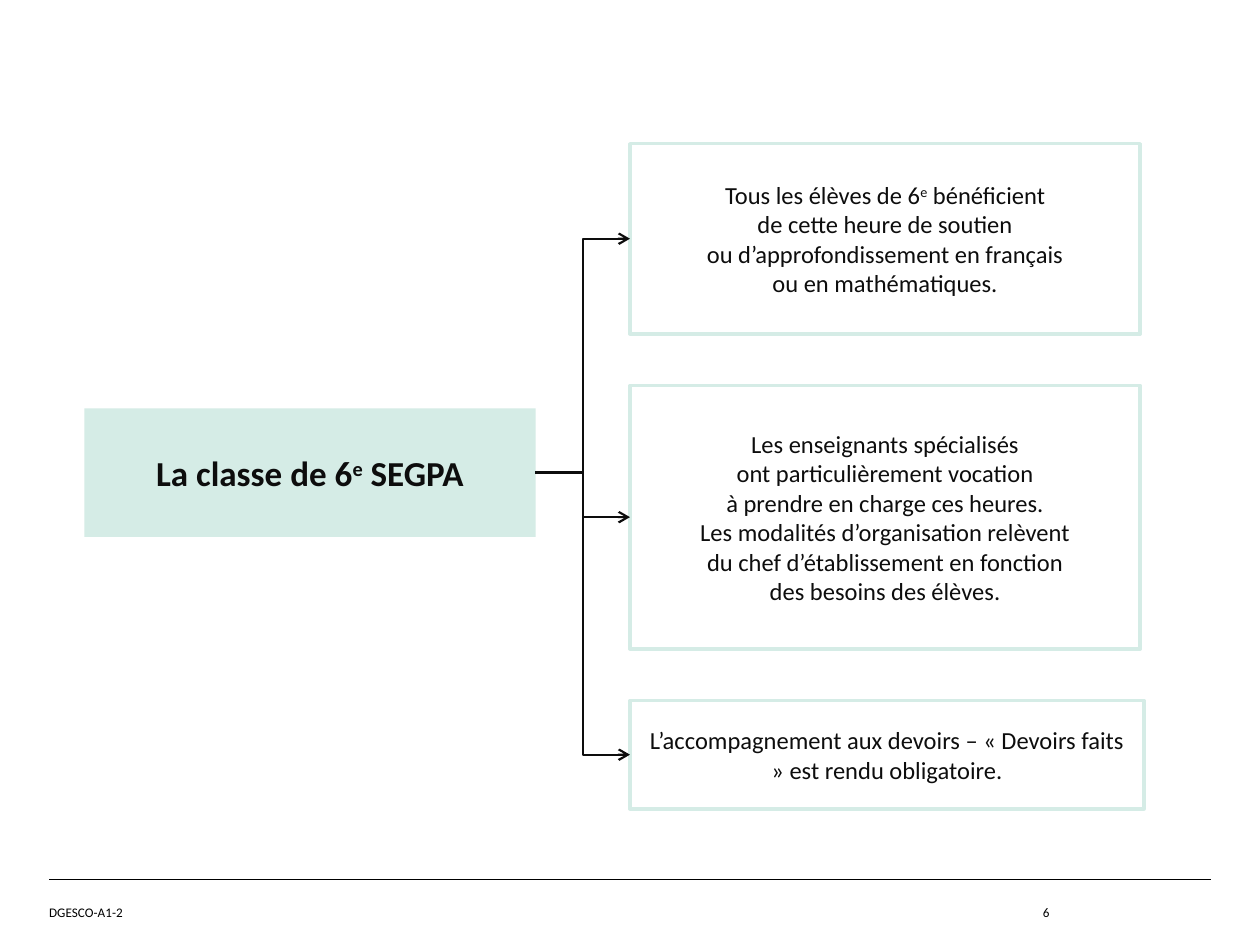
from copy import deepcopy

from lxml import etree
from pptx import Presentation
from pptx.dml.color import RGBColor
from pptx.enum import shapes, text
from pptx.oxml.ns import qn
from pptx.util import Inches, Pt

# Content: lines of (text, superscript) runs
TOPIC = [[("La classe de 6", False), ("e", True), (" SEGPA", False)]]
DETAILS = [  # top, width, height, lines
    (1.14, 4.05, 1.51, [
        [("Tous les élèves de 6", False), ("e", True), (" bénéficient", False)],
        [("de cette heure de soutien", False)],
        [("ou d’approfondissement en français", False)],
        [("ou en mathématiques.", False)],
    ]),
    (3.06, 4.05, 2.09, [
        [("Les enseignants spécialisés", False)],
        [("ont particulièrement vocation", False)],
        [("à prendre en charge ces heures.", False)],
        [("Les modalités d’organisation relèvent", False)],
        [("du chef d’établissement en fonction", False)],
        [("des besoins des élèves.", False)],
    ]),
    (5.56, 4.08, 0.86, [
        [("L’accompagnement aux devoirs – « Devoirs faits » est rendu obligatoire.", False)],
    ]),
]
FOOTERS = [  # left, width, alignment, text
    (0.39, 6.46, text.PP_ALIGN.LEFT, "DGESCO-A1-2"),
    (6.85, 1.48, text.PP_ALIGN.RIGHT, "6"),
]
MINT, INK, BLACK = "D5ECE6", "0D0D0D", "000000"
DETAIL_LEFT, FOOTER_TOP = 5, 6.98


def paint(color_format, hex_color):
    color_format.rgb = RGBColor.from_string(hex_color)


def write(frame, lines, size, color, align, bold=None):
    frame.word_wrap = True
    frame.vertical_anchor = text.MSO_ANCHOR.MIDDLE
    paragraph = frame.paragraphs[0]
    paragraph.alignment = align
    for number, line in enumerate(lines):
        if number:
            paragraph.add_line_break()
        for words, superscript in line:
            run = paragraph.add_run()
            run.text = words
            run.font.name, run.font.size, run.font.bold = "Calibri", Pt(size), bold
            paint(run.font.color, color)
            if superscript:
                run.font._element.set("baseline", "30000")
    # Line breaks take the size of the text around them
    for line_break in paragraph._p.findall(qn("a:br")):
        line_break.append(deepcopy(paragraph.runs[0].font._element))


def add_box(kind, left, top, width, height, lines, size, bold=None):
    box = slide.shapes.add_shape(
        kind, Inches(left), Inches(top), Inches(width), Inches(height))
    box.shadow.inherit = False
    write(box.text_frame, lines, size, INK, text.PP_ALIGN.CENTER, bold)
    return box


def add_line(kind, start, end, color, width):
    line = slide.shapes.add_connector(kind, *map(Inches, start + end))
    paint(line.line.color, color)
    line.line.width = Pt(width)
    etree.SubElement(line._element.spPr, qn("a:effectLst"))
    return line


prs = Presentation()
prs.slide_width, prs.slide_height = Inches(10), Inches(7.5)
slide = prs.slides.add_slide(prs.slide_layouts[6])

# Footer rule
add_line(shapes.MSO_CONNECTOR.STRAIGHT, (0.39, FOOTER_TOP), (9.61, FOOTER_TOP), BLACK, 0.8)

# Topic
topic = add_box(shapes.MSO_SHAPE.ROUNDED_RECTANGLE, 0.67, 3.24, 3.58, 1.02, TOPIC, 20, True)
topic.adjustments[0] = 0
topic.fill.solid()
paint(topic.fill.fore_color, MINT)
topic.line.fill.background()

# Details, each tied to the topic by an elbow arrow
for top, width, height, lines in DETAILS:
    detail = add_box(shapes.MSO_SHAPE.RECTANGLE, DETAIL_LEFT, top, width, height, lines, 14)
    detail.fill.background()
    paint(detail.line.color, MINT)
    detail.line.width = Pt(2)
    arrow = add_line(shapes.MSO_CONNECTOR.ELBOW,
                     (DETAIL_LEFT, top + height / 2), (4.25, 3.75), INK, 1.25)
    arrow.begin_connect(detail, 1)
    arrow.end_connect(topic, 3)
    etree.SubElement(arrow.line._get_or_add_ln(), qn("a:headEnd"), type="arrow")

# Footer texts
for left, width, align, words in FOOTERS:
    frame = slide.shapes.add_textbox(
        Inches(left), Inches(FOOTER_TOP), Inches(width), Inches(0.52)).text_frame
    frame.margin_left = frame.margin_right = frame.margin_top = frame.margin_bottom = 0
    write(frame, [[(words, False)]], 7.5, BLACK, align)

prs.save("out.pptx")
